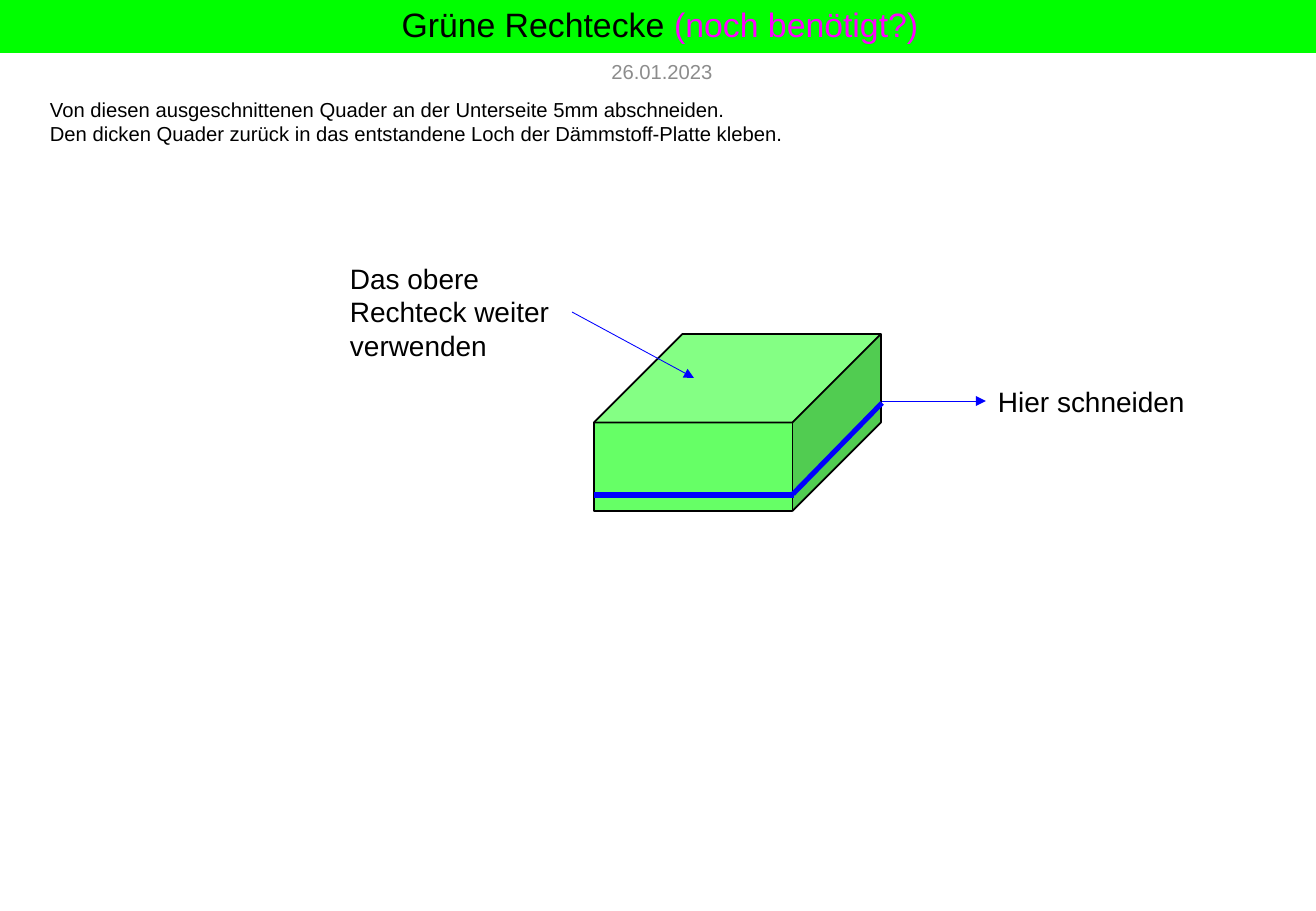
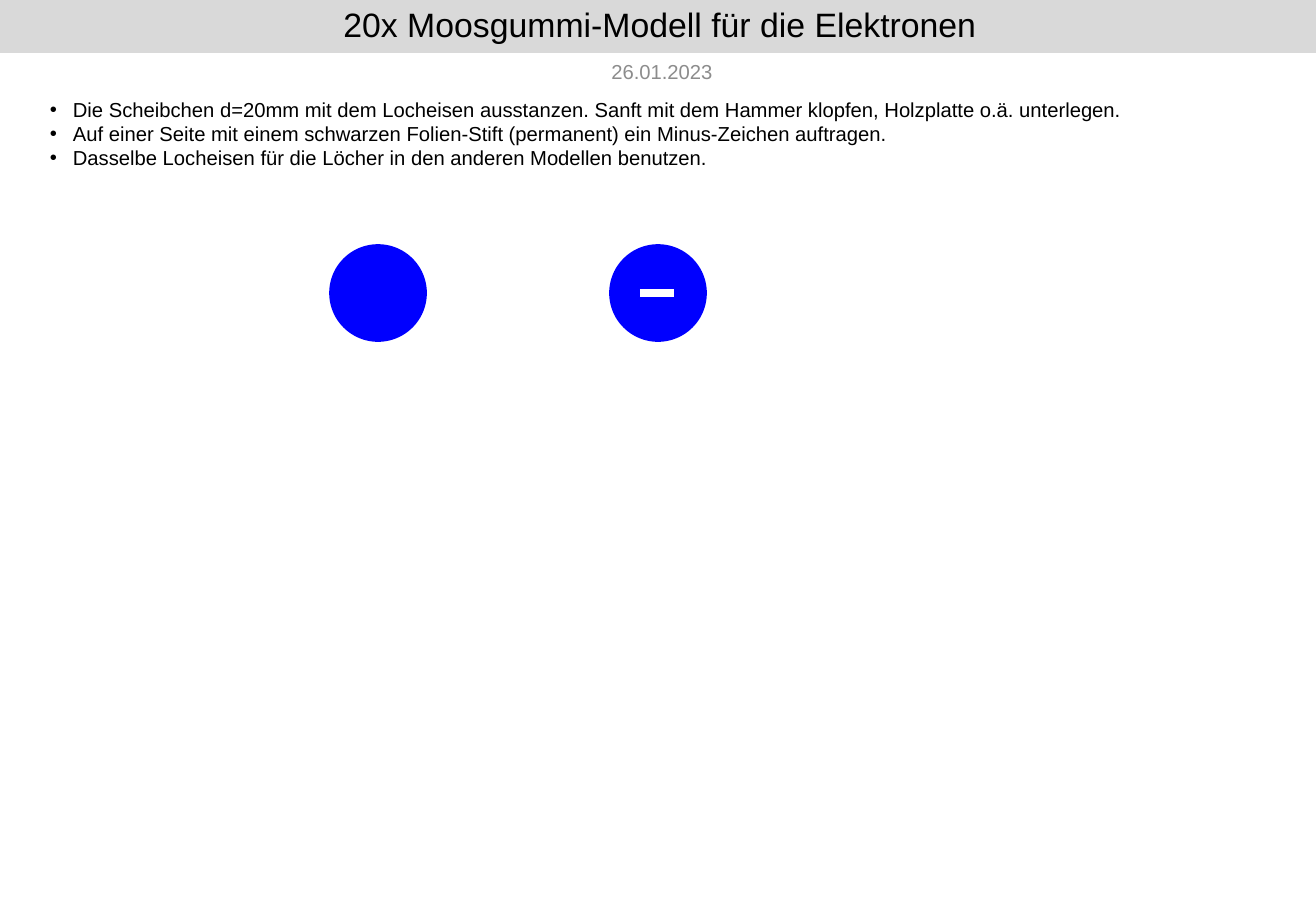
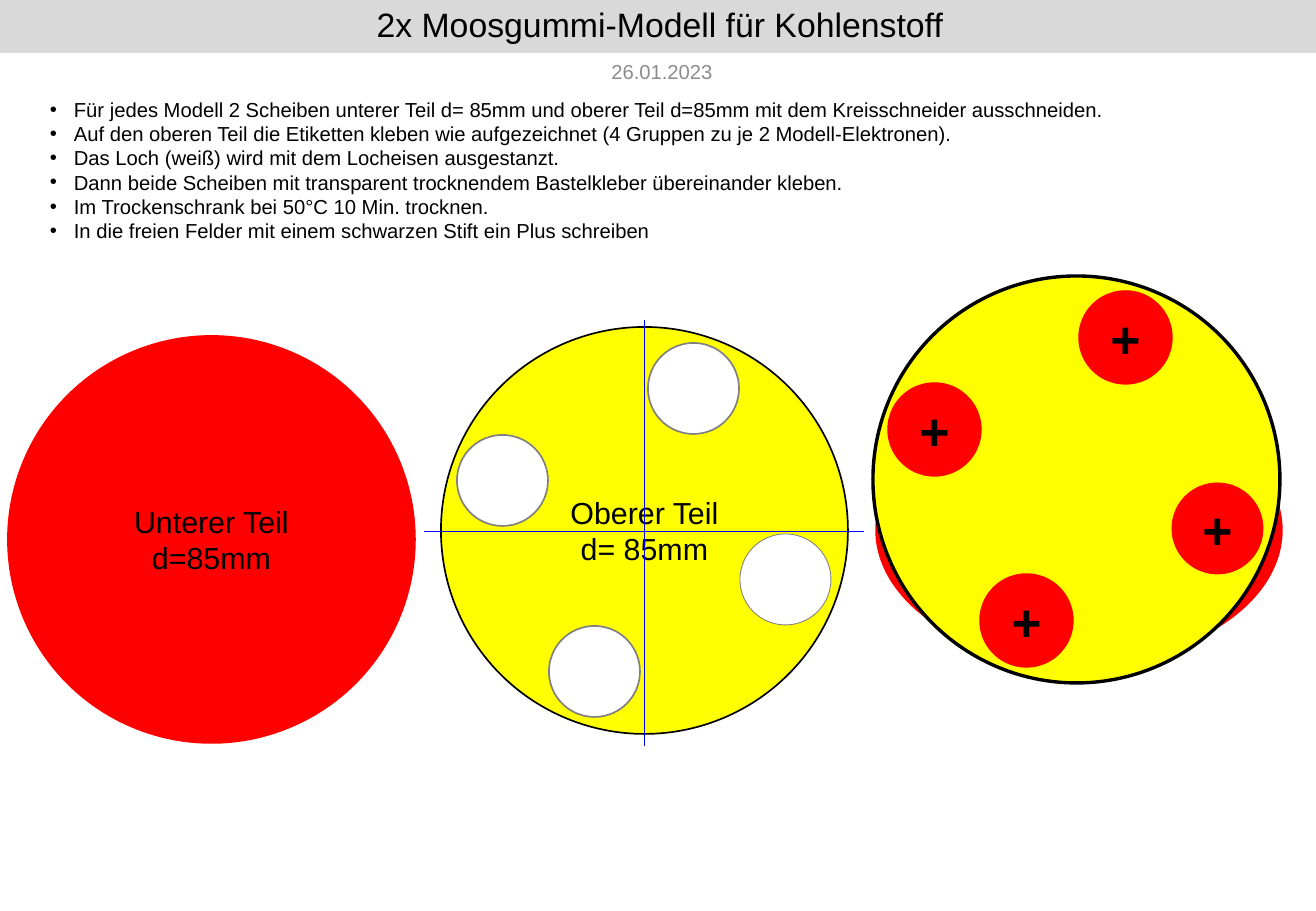
"""Build three workshop slides on foam models of atoms."""
from lxml.etree import SubElement
from pptx import Presentation
from pptx.dml.color import RGBColor
from pptx.enum.shapes import MSO_CONNECTOR, MSO_SHAPE
from pptx.enum.text import MSO_ANCHOR, PP_ALIGN
from pptx.oxml.ns import qn
from pptx.util import Pt

PX = 914400 / 121.5
BLACK = RGBColor(0x00, 0x00, 0x00)
WHITE = RGBColor(0xFF, 0xFF, 0xFF)
GREY = RGBColor(0x80, 0x80, 0x80)
DATE_GREY = RGBColor(0x8C, 0x8C, 0x8C)
BAND_GREY = RGBColor(0xD9, 0xD9, 0xD9)
BAND_GREEN = RGBColor(0x00, 0xFF, 0x00)
CUBE_GREEN = RGBColor(0x66, 0xFF, 0x66)
MAGENTA = RGBColor(0xFF, 0x00, 0xFF)
BLUE = RGBColor(0x00, 0x00, 0xFF)
RED = RGBColor(0xFF, 0x00, 0x00)
YELLOW = RGBColor(0xFF, 0xFF, 0x00)


def write(box, text, size=12, color=BLACK, align=PP_ALIGN.LEFT, anchor=MSO_ANCHOR.TOP,
          bold=False, spacing=None, indent=0, accent=""):
    frame = box.text_frame
    frame.word_wrap = True
    frame.vertical_anchor = anchor
    for number, line in enumerate(text.split("\n")):
        para = frame.add_paragraph() if number else frame.paragraphs[0]
        para.alignment = align
        para.line_spacing = spacing
        if indent:
            properties = para._p.get_or_add_pPr()
            properties.set("marL", str(round(indent * PX)))
            properties.set("indent", str(round(-indent * PX)))
            SubElement(properties, qn("a:buFont"), typeface="Arial")
            SubElement(properties, qn("a:buChar"), char="•")
        for words, tint in ((line, color), (accent, MAGENTA)):
            if words:
                span = para.add_run()
                span.text = words
                span.font.name = "Arial"
                span.font.size = Pt(size)
                span.font.bold = bold
                span.font.color.rgb = tint


def draw(page, kind, left, top, width, height, fill, line=None, weight=1):
    shape = page.shapes.add_shape(kind, *(round(n * PX) for n in (left, top, width, height)))
    shape.shadow.inherit = False
    shape.fill.solid()
    shape.fill.fore_color.rgb = fill
    if line is None:
        shape.line.fill.background()
    else:
        shape.line.color.rgb = line
        shape.line.width = Pt(weight)
    return shape


deck = Presentation()
deck.slide_width = round(1316 * PX)
deck.slide_height = round(911 * PX)
CENTERED = {"align": PP_ALIGN.CENTER, "anchor": MSO_ANCHOR.MIDDLE}

contents = [
    ("Grüne Rechtecke ", "(noch benötigt?)", BAND_GREEN, 0,
     "Von diesen ausgeschnittenen Quader an der Unterseite 5mm abschneiden.\n"
     "Den dicken Quader zurück in das entstandene Loch der Dämmstoff-Platte kleben."),
    ("20x Moosgummi-Modell für die Elektronen", "", BAND_GREY, 23,
     "Die Scheibchen d=20mm mit dem Locheisen ausstanzen. "
     "Sanft mit dem Hammer klopfen, Holzplatte o.ä. unterlegen.\n"
     "Auf einer Seite mit einem schwarzen Folien-Stift (permanent) ein Minus-Zeichen auftragen.\n"
     "Dasselbe Locheisen für die Löcher in den anderen Modellen benutzen."),
    ("2x Moosgummi-Modell für Kohlenstoff", "", BAND_GREY, 24,
     "Für jedes Modell 2 Scheiben unterer Teil d= 85mm und oberer Teil d=85mm "
     "mit dem Kreisschneider ausschneiden.\n"
     "Auf den oberen Teil die Etiketten kleben wie aufgezeichnet "
     "(4 Gruppen zu je 2 Modell-Elektronen).\n"
     "Das Loch (weiß) wird mit dem Locheisen ausgestanzt.\n"
     "Dann beide Scheiben mit transparent trocknendem Bastelkleber übereinander kleben.\n"
     "Im Trockenschrank bei 50°C 10 Min. trocknen.\n"
     "In die freien Felder mit einem schwarzen Stift ein Plus schreiben"),
]
pages = []
for title, accent, band_color, indent, steps in contents:
    page = deck.slides.add_slide(deck.slide_layouts[6])
    pages.append(page)
    band = draw(page, MSO_SHAPE.RECTANGLE, 0, 0, 1320, 53, band_color)
    write(band, title, size=20, spacing=0.9, accent=accent, **CENTERED)
    date = page.shapes.add_textbox(*(round(n * PX) for n in (583, 52, 158, 38)))
    write(date, "26.01.2023", color=DATE_GREY, **CENTERED)
    body = page.shapes.add_textbox(*(round(n * PX) for n in (38, 91, 1244, 96)))
    write(body, steps, indent=indent)

cuboid_page, electron_page, carbon_page = pages

cuboid = draw(cuboid_page, MSO_SHAPE.CUBE, 594, 334, 287, 177, CUBE_GREEN, BLACK)
cuboid.adjustments[0] = 0.5
for text, place in (
    ("Hier schneiden", (986, 379, 226, 46)),
    ("Das obere Rechteck weiter verwenden", (338, 255, 235, 114)),
):
    label = cuboid_page.shapes.add_textbox(*(round(n * PX) for n in place))
    write(label, text, size=16.6)

for left in (330, 610):
    draw(electron_page, MSO_SHAPE.OVAL, left, 245, 96, 96, BLUE, BLUE)

DISC = 407
HOLE = 91
HOLES = [(207, 16, 1, 2), (108, 299, 1, 2), (299, 207, 0.5, 0.5), (16, 108, 1, 2)]
lower = draw(carbon_page, MSO_SHAPE.OVAL, 8, 336, DISC, DISC, RED, RED)
write(lower, "Unterer Teil\nd=85mm", size=18, **CENTERED)
upper = draw(carbon_page, MSO_SHAPE.OVAL, 441, 327, DISC, DISC, YELLOW, BLACK)
write(upper, "Oberer Teil\nd= 85mm", size=18, **CENTERED)
for across, down, weight, _ in HOLES:
    draw(carbon_page, MSO_SHAPE.OVAL, 441 + across, 327 + down, HOLE, HOLE, WHITE, GREY, weight)
draw(carbon_page, MSO_SHAPE.OVAL, 877, 398, 404, 264, RED, RED, 2)
draw(carbon_page, MSO_SHAPE.OVAL, 873, 276, DISC, DISC, YELLOW, BLACK, 2)
for across, down, _, weight in HOLES:
    proton = draw(carbon_page, MSO_SHAPE.OVAL, 873 + across, 276 + down, HOLE, HOLE,
                  RED, RED, weight)
    write(proton, "+", size=30.6, bold=True, **CENTERED)

for page, ends, color, weight, arrow in (
    (cuboid_page, (882, 401, 986, 401), BLUE, 0.5, True),
    (cuboid_page, (594, 495, 794, 495), BLUE, 3, False),
    (cuboid_page, (793, 494, 882, 403), BLUE, 3, False),
    (cuboid_page, (572, 312, 694, 378), BLUE, 0.5, True),
    (electron_page, (640, 293, 674, 293), WHITE, 4.25, False),
    (carbon_page, (644, 320, 644, 746), BLUE, 0.5, False),
    (carbon_page, (424, 531, 864, 531), BLUE, 0.5, False),
):
    stroke = page.shapes.add_connector(MSO_CONNECTOR.STRAIGHT, *(round(n * PX) for n in ends))
    stroke.line.color.rgb = color
    stroke.line.width = Pt(weight)
    if arrow:
        SubElement(stroke.line._get_or_add_ln(), qn("a:tailEnd"), type="triangle")
    SubElement(stroke._element.spPr, qn("a:effectLst"))

deck.save("out.pptx")
